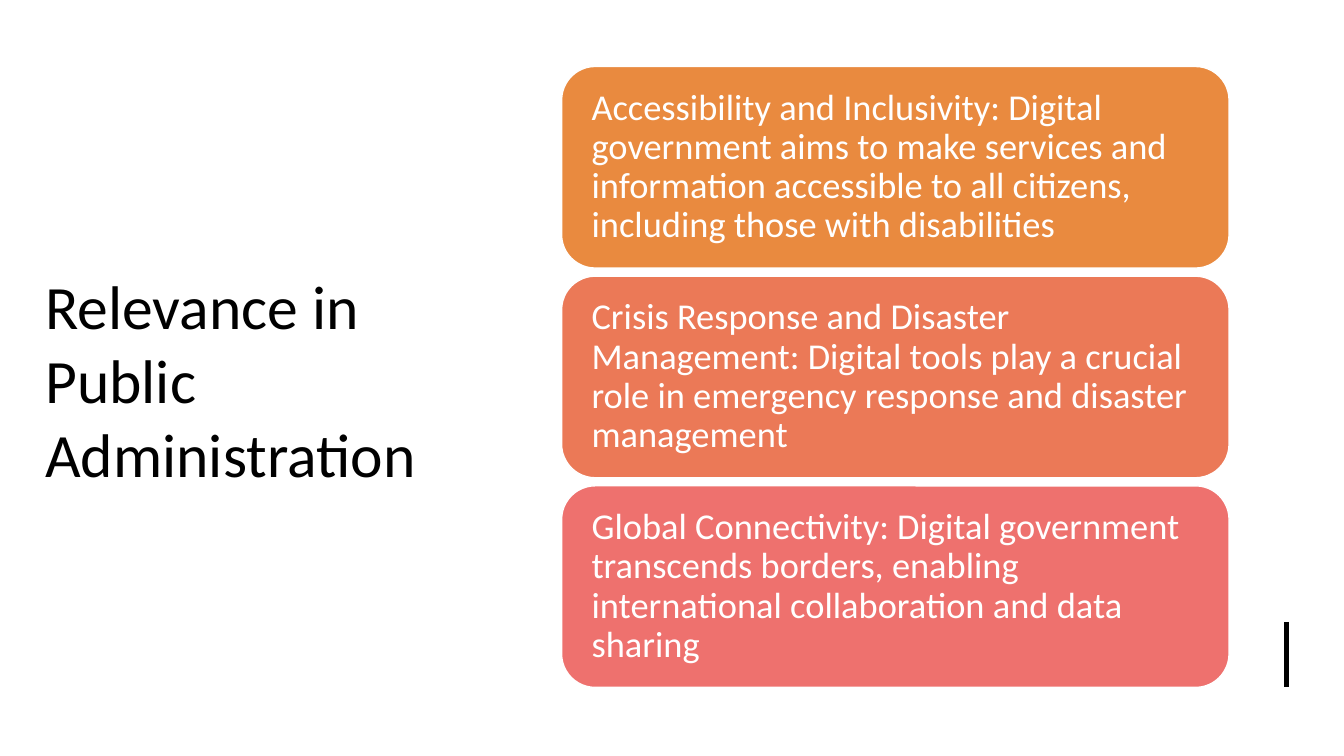
from dataclasses import dataclass

from lxml.etree import SubElement
from pptx import Presentation
from pptx.dml.color import RGBColor as Color
from pptx.enum.shapes import MSO_CONNECTOR as Connector, MSO_SHAPE as Shape
from pptx.enum.text import MSO_ANCHOR as Anchor, MSO_AUTO_SIZE as AutoSize, PP_ALIGN as Align
from pptx.oxml.ns import qn
from pptx.util import Inches, Pt

TITLE = "Relevance in Public Administration"
CARDS = [
    ("Accessibility and Inclusivity: Digital government aims to make services and "
     "information accessible to all citizens, including those with disabilities", "E98A3F"),
    ("Crisis Response and Disaster Management: Digital tools play a crucial role in "
     "emergency response and disaster management", "EB7957"),
    ("Global Connectivity: Digital government transcends borders, enabling "
     "international collaboration and data sharing", "EE716E"),
]


@dataclass(frozen=True)
class Theme:
    font: str = "Calibri"
    dark: str = "000000"
    light: str = "FFFFFF"
    title_size: int = 44
    card_size: int = 26


THEME = Theme()
CARD_LEFT, CARD_TOP, CARD_WIDTH, CARD_HEIGHT, CARD_GAP = 5.57, 0.66, 6.62, 2, 0.08
CARD_INSET = 0.2


def write(shape, text, size, color):
    frame = shape.text_frame
    frame.word_wrap = True
    frame.auto_size = AutoSize.NONE
    frame.vertical_anchor = Anchor.MIDDLE
    para = frame.paragraphs[0]
    para.alignment = Align.LEFT
    span = para.add_run()
    span.text = text
    span.font.name = THEME.font
    span.font.size = Pt(size)
    span.font.color.rgb = Color.from_string(color)
    return frame


def add_title(page):
    title = page.shapes.title
    title.left, title.top = Inches(0.35), Inches(0.94)
    title.width, title.height = Inches(4.26), Inches(5.64)
    write(title, TITLE, THEME.title_size, THEME.dark)


def add_card(page, index, text, fill):
    top = CARD_TOP + index * (CARD_HEIGHT + CARD_GAP)
    card = page.shapes.add_shape(Shape.ROUNDED_RECTANGLE, Inches(CARD_LEFT), Inches(top),
                                 Inches(CARD_WIDTH), Inches(CARD_HEIGHT))
    card.shadow.inherit = False
    card.fill.solid()
    card.fill.fore_color.rgb = Color.from_string(fill)
    card.line.color.rgb = Color.from_string(THEME.light)
    card.line.width = Pt(1)
    frame = write(card, text, THEME.card_size, THEME.light)
    frame.margin_left = frame.margin_right = Inches(CARD_INSET)
    frame.margin_top = frame.margin_bottom = Inches(CARD_INSET)
    frame.paragraphs[0].line_spacing = 0.9


def add_accent(page):
    accent = page.shapes.add_connector(Connector.STRAIGHT, Inches(12.76), Inches(6.17),
                                       Inches(12.76), Inches(6.82))
    accent.line.color.rgb = Color.from_string(THEME.dark)
    accent.line.width = Pt(3)
    SubElement(accent.line._get_or_add_ln().getparent(), qn("a:effectLst"))


def main():
    deck = Presentation()
    deck.slide_width, deck.slide_height = Inches(13.33), Inches(7.5)
    page = deck.slides.add_slide(deck.slide_layouts[5])
    page.background.fill.solid()
    page.background.fill.fore_color.rgb = Color.from_string(THEME.light)
    add_title(page)
    add_accent(page)
    for index, (text, fill) in enumerate(CARDS):
        add_card(page, index, text, fill)
    deck.save("out.pptx")


if __name__ == "__main__":
    main()
